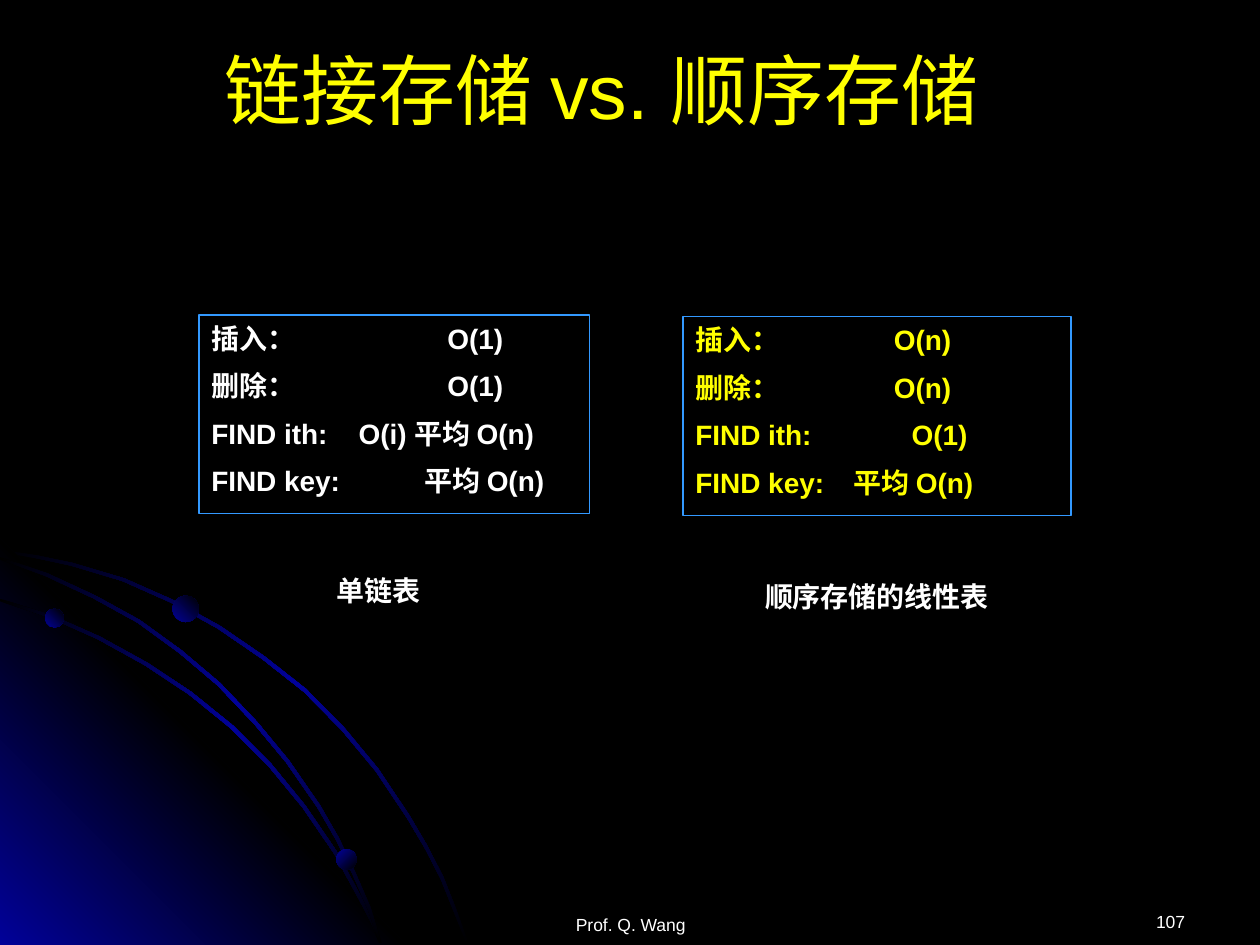
import pptx
import pptx.util
import pptx.dml.color
import pptx.enum.shapes
import pptx.enum.text
import pptx.oxml
import pptx.oxml.ns

Cm = pptx.util.Cm
Pt = pptx.util.Pt
qn = pptx.oxml.ns.qn
ALIGN = pptx.enum.text.PP_ALIGN
ANCHOR = pptx.enum.text.MSO_ANCHOR
AUTO = pptx.enum.text.MSO_AUTO_SIZE
SHAPE = pptx.enum.shapes.MSO_SHAPE

BLACK, BLUE, WHITE, YELLOW, BORDER = "000000", "010199", "FFFFFF", "FFFF00", "3399FF"
BAND = 0.05

ARCS = [
    [(0, 0.28), (0.71, 0.4), (1.42, 0.55), (2.46, 0.86), (3.43, 1.29),
     (4.39, 1.82), (5.28, 2.43), (6.12, 3.09), (6.88, 3.86), (7.57, 4.69),
     (8.2, 5.63), (8.56, 6.24), (8.89, 6.88), (9.14, 7.51), (9.4, 8.17)],
    [(0, 1.27), (0.99, 1.6), (1.96, 2.03), (2.92, 2.56), (3.81, 3.15),
     (4.65, 3.83), (5.41, 4.59), (6.1, 5.43), (6.73, 6.35), (7.24, 7.29),
     (7.47, 7.74), (7.65, 8.17)],
    [(0, 0.43), (0.91, 0.76), (1.88, 1.21), (2.77, 1.7), (3.61, 2.31),
     (4.39, 2.97), (5.13, 3.75), (5.77, 4.52), (6.4, 5.43), (6.78, 6.09),
     (7.11, 6.78), (7.42, 7.49), (7.65, 8.17)],
]
BALLS = [(0.91, 1.42, 0.38, 315), (6.78, 6.27, 0.41, 45), (3.48, 1.16, 0.53, 315)]


def rgb(value):
    return pptx.dml.color.RGBColor.from_string(value)


def set_all(target, values):
    for name, value in values.items():
        setattr(target, name, value)


def add_xml(parent, tag, **attrs):
    node = pptx.oxml.ns.qn(tag)
    child = parent.makeelement(node, {k: str(v) for k, v in attrs.items()})
    parent.append(child)
    return child


def paint_gradient(sp, colors, angle):
    sp.shadow.inherit = False
    sp.line.fill.background()
    sp.fill.background()
    props = sp._element.spPr
    grad = props.makeelement(qn("a:gradFill"), {"rotWithShape": "1"})
    stops = add_xml(grad, "a:gsLst")
    for i, color in enumerate(colors):
        stop = add_xml(stops, "a:gs", pos=100000 * i // (len(colors) - 1))
        add_xml(stop, "a:srgbClr", val=color)
    add_xml(grad, "a:lin", ang=angle * 60000, scaled=0)
    props.replace(props.find(qn("a:noFill")), grad)


def add_outline(s, left, top, points, colors, angle):
    points = [(Cm(left + x), Cm(top + y)) for x, y in points]
    builder = s.shapes.build_freeform(*points[0], scale=1.0)
    builder.add_line_segments(points[1:], close=True)
    paint_gradient(builder.convert_to_shape(), colors, angle)


def arc_band(lower):
    upper = [(x + BAND, y - BAND) for x, y in lower]
    upper[0] = (0, upper[0][1])
    upper[-1] = (upper[-1][0], lower[-1][1])
    return lower + upper[::-1]


def draw_orbits(s, left, top, size):
    corner = [(0, 0), (size, size), (0, size)]
    outlines = [(arc_band(arc), [BLACK, BLUE, BLACK], 45) for arc in ARCS]
    outlines.insert(1, (corner, [BLUE, BLACK, BLUE], 315))
    for points, colors, angle in outlines:
        add_outline(s, left, top, points, colors, angle)
    for x, y, d, angle in BALLS:
        ball = s.shapes.add_shape(SHAPE.OVAL, Cm(left + x), Cm(top + y), Cm(d), Cm(d))
        paint_gradient(ball, [BLUE, BLACK], angle)


def write_line(p, text, size, color, bold=False, align=ALIGN.LEFT, tab=None):
    p.alignment = align
    if bold:
        before = add_xml(p._p.get_or_add_pPr(), "a:spcBef")
        add_xml(before, "a:spcPct", val=50000)
    if tab:
        tabs = add_xml(p._p.get_or_add_pPr(), "a:tabLst")
        add_xml(tabs, "a:tab", pos=Cm(tab), algn="l")
    r = p.add_run()
    r.text = text
    set_all(r.font, {"size": Pt(size), "name": "Arial", "bold": bold})
    r.font.color.rgb = rgb(color)


def add_label(s, box, text, size, color, frame=None, **style):
    tf = s.shapes.add_textbox(*map(Cm, box)).text_frame
    set_all(tf, {"word_wrap": True, **(frame or {})})
    write_line(tf.paragraphs[0], text, size, color, **style)


def draw_panel(s, box, rows, color, caption, caption_box):
    left, top, width, height = box
    sp = s.shapes.add_shape(SHAPE.RECTANGLE, *map(Cm, box))
    sp.shadow.inherit = False
    sp.fill.background()
    sp.line.color.rgb = rgb(BORDER)
    sp.line.width = Pt(0.75)
    tf = sp.text_frame
    set_all(tf, {"word_wrap": True, "vertical_anchor": ANCHOR.TOP,
                 "auto_size": AUTO.SHAPE_TO_FIT_TEXT})
    for i, (name, cost, tab) in enumerate(rows):
        p = tf.add_paragraph() if i else tf.paragraphs[0]
        write_line(p, f"{name}\t{cost}", 16, color, bold=True, tab=tab)
    dx, dy, caption_width = caption_box
    add_label(s, (left + dx, top + dy, caption_width, 0.94), caption, 16, WHITE,
              bold=True, align=ALIGN.CENTER)


def draw_footer(s, left, top):
    frame = {"margin_top": Cm(0.56)}
    add_label(s, (left + 9.53, top, 5.92, 1.27), "107", 10, WHITE, frame,
              align=ALIGN.RIGHT)
    add_label(s, (left, top + 0.05, 8.05, 1.27), "Prof. Q. Wang", 10, WHITE, frame,
              align=ALIGN.CENTER)


def main():
    prs = pptx.Presentation()
    set_all(prs, {"slide_width": Cm(25.4), "slide_height": Cm(19.05)})
    s = prs.slides.add_slide(prs.slide_layouts[6])
    s.background.fill.solid()
    s.background.fill.fore_color.rgb = rgb(BLACK)

    draw_orbits(s, 0, 10.85, 8.2)
    draw_footer(s, 8.69, 17.81)
    add_label(s, (2.54, 0.84, 19.18, 1.88), "链接存储 vs. 顺序存储", 44, YELLOW,
              {"vertical_anchor": ANCHOR.MIDDLE}, align=ALIGN.CENTER)
    draw_panel(s, (4.01, 6.35, 7.87, 4.01),
               [("插入：", "O(1)", 4.76), ("删除：", "O(1)", 4.76),
                ("FIND ith:", "O(i) 平均 O(n)", 2.97), ("FIND key:", "平均 O(n)", 4.3)],
               WHITE, "单链表", (1.81, 5.08, 3.61))
    draw_panel(s, (13.77, 6.38, 7.82, 4.01),
               [("插入：", "O(n)", 4), ("删除：", "O(n)", 4),
                ("FIND ith:", "O(1)", 4.36), ("FIND key:", "平均 O(n)", 3.19)],
               YELLOW, "顺序存储的线性表", (0.63, 5.18, 6.55))
    prs.save("out.pptx")


if __name__ == "__main__":
    main()
